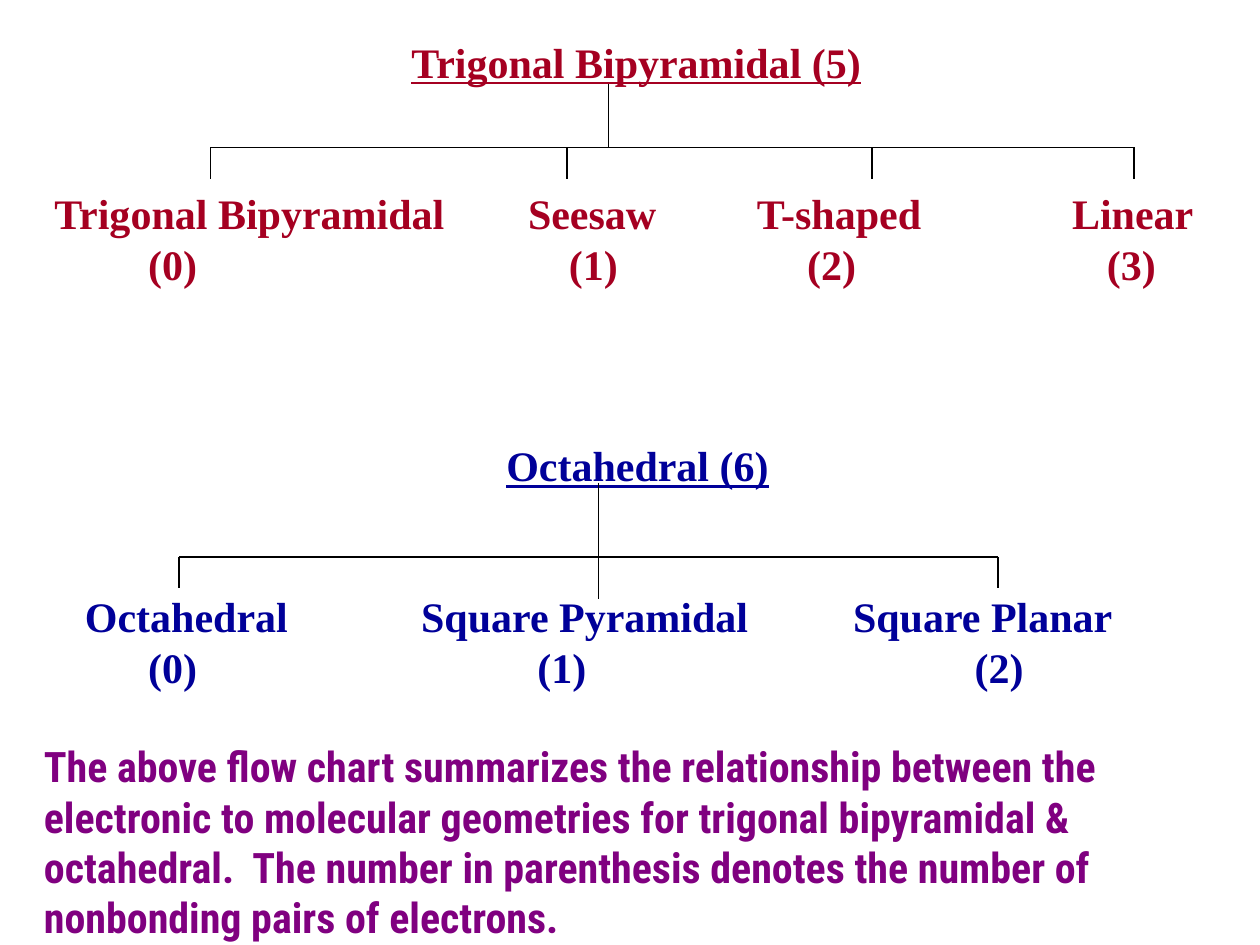
import pptx
import pptx.dml.color
import pptx.enum.shapes
import pptx.enum.text
import pptx.oxml.ns
import pptx.util
from lxml import etree
from pptx.util import Inches

THEME = {
    "red": "A50021", "blue": "000099", "purple": "800080", "line": "000000",
    "serif": "Times New Roman", "sans": "Roboto Condensed",
    "size": 24, "line_width": 0.75,
}
FIRST_ROW, ROW_PITCH, LABEL_WIDTH = 0.29, 0.4, 4

# Each branch: name, centre of name, number, centre of number, x of drop, bottom of drop
TREES = [
    {"heading": "Trigonal Bipyramidal (5)", "centre": 5.05, "row": 0, "color": "red",
     "stem": (4.83, 0.67), "bar": 1.17,
     "branches": [("Trigonal Bipyramidal", 1.98, "(0)", 1.37, 1.67, 1.42),
                  ("Seesaw", 4.7, "(1)", 4.71, 4.5, 1.42),
                  ("T-shaped", 6.66, "(2)", 6.6, 6.92, 1.42),
                  ("Linear", 8.99, "(3)", 8.98, 9, 1.42)]},
    {"heading": "Octahedral (6)", "centre": 5.06, "row": 8, "color": "blue",
     "stem": (4.75, 3.83), "bar": 4.42,
     "branches": [("Octahedral", 1.48, "(0)", 1.37, 1.42, 4.67),
                  ("Square Pyramidal", 4.64, "(1)", 4.46, 4.75, 4.75),
                  ("Square Planar", 7.8, "(2)", 7.93, 7.92, 4.67)]},
]

presentation = pptx.Presentation()
presentation.slide_width = Inches(10)
presentation.slide_height = Inches(7.5)
slide = presentation.slides.add_slide(presentation.slide_layouts[6])


def add_text(text, left, top, width, height, color, font="serif",
             underline=False, align="CENTER", inset=0.0):
    box = slide.shapes.add_textbox(Inches(left), Inches(top), Inches(width), Inches(height))
    frame = box.text_frame
    frame.word_wrap = True
    frame.margin_left = frame.margin_right = Inches(inset)
    frame.margin_top = frame.margin_bottom = Inches(inset / 2)
    paragraph = frame.paragraphs[0]
    paragraph.alignment = getattr(pptx.enum.text.PP_ALIGN, align)
    run = paragraph.add_run()
    run.text = text
    run.font.name = THEME[font]
    run.font.size = pptx.util.Pt(THEME["size"])
    run.font.bold = True
    run.font.underline = underline
    run.font.color.rgb = pptx.dml.color.RGBColor.from_string(THEME[color])


def add_line(x1, y1, x2, y2):
    connector = slide.shapes.add_connector(
        pptx.enum.shapes.MSO_CONNECTOR.STRAIGHT,
        Inches(x1), Inches(y1), Inches(x2), Inches(y2))
    connector.line.color.rgb = pptx.dml.color.RGBColor.from_string(THEME["line"])
    connector.line.width = pptx.util.Pt(THEME["line_width"])
    etree.SubElement(connector._element.spPr, pptx.oxml.ns.qn("a:effectLst"))


for tree in TREES:
    branches, bar = tree["branches"], tree["bar"]
    labels = [(tree["heading"], tree["centre"], 0)]
    for name, name_centre, number, number_centre, drop_x, drop_bottom in branches:
        labels += [(name, name_centre, 3), (number, number_centre, 4)]
        add_line(drop_x, bar, drop_x, drop_bottom)
    for text, centre, row in labels:
        add_text(text, centre - LABEL_WIDTH / 2,
                 FIRST_ROW + ROW_PITCH * (tree["row"] + row),
                 LABEL_WIDTH, ROW_PITCH, tree["color"], underline=row == 0)
    stem_x, stem_top = tree["stem"]
    add_line(stem_x, stem_top, stem_x, bar)
    add_line(branches[0][4], bar, branches[-1][4], bar)

add_text("The above flow chart summarizes the relationship between the electronic to "
         "molecular geometries for trigonal bipyramidal & octahedral.  The number in "
         "parenthesis denotes the number of nonbonding pairs of electrons.",
         0.25, 5.83, 9.75, 1.3, "purple", font="sans", align="LEFT", inset=0.1)

presentation.save("out.pptx")
